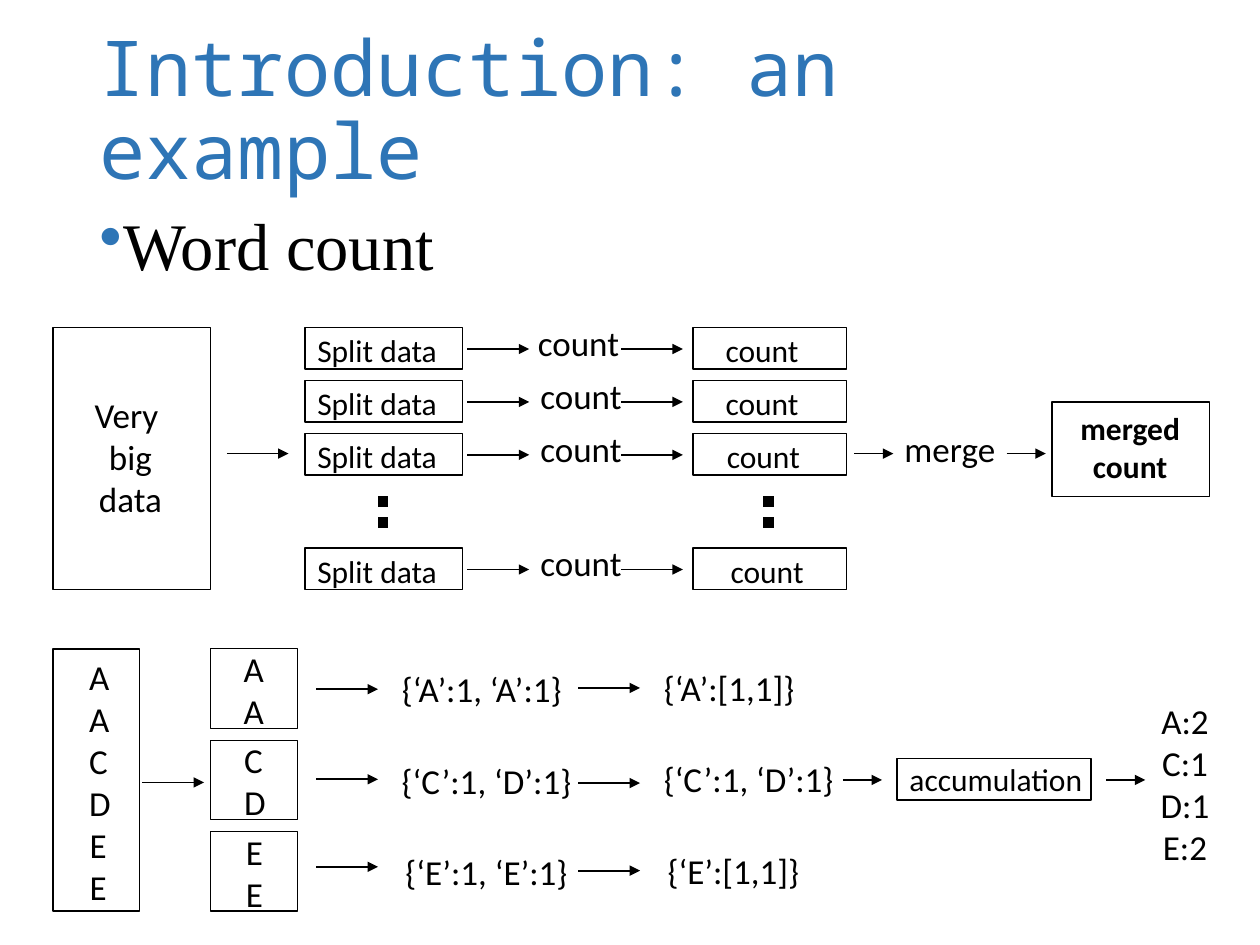
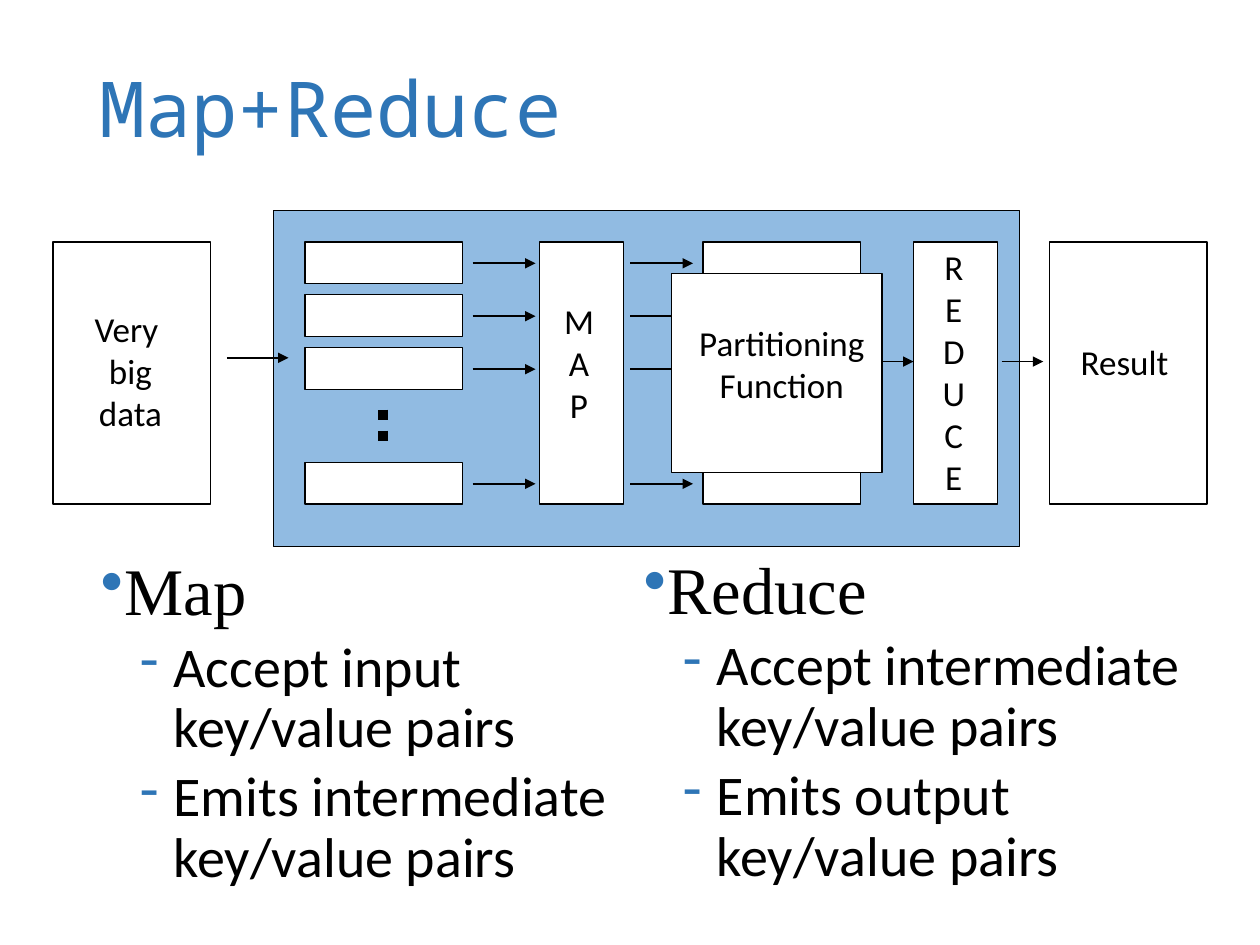
from lxml import etree
from pptx import Presentation
from pptx.dml.color import RGBColor as Rgb
from pptx.enum.dml import MSO_LINE as Dash
from pptx.enum.shapes import MSO_CONNECTOR as Conn, MSO_SHAPE as Kind
from pptx.enum.text import MSO_ANCHOR as Anchor, MSO_AUTO_SIZE as Fit, PP_ALIGN as Align
from pptx.oxml.ns import qn
from pptx.util import Inches, Pt

# Content
INTRO = "Introduction: an example"
MODEL = "Map+Reduce"
WORDS = [(0, "Word count")]
MAP = [(0, "Map"),
       (1, "Accept input key/value pairs"),
       (1, "Emits intermediate key/value pairs")]
REDUCE = [(0, "Reduce"),
          (1, "Accept intermediate key/value pairs"),
          (1, "Emits output key/value pairs")]
BIG = ["Very ", "big", "data"]
SUMS = ["A:2", "C:1", "D:1", "E:2"]
# Each part: its letters, mapped pairs, grouped pairs
PARTS = [
    (["A", "A"], "{‘A’:1, ‘A’:1}", "{‘A’:[1,1]}"),
    (["C", "D "], "{‘C’:1, ‘D’:1}", "{‘C’:1, ‘D’:1}"),
    (["E", "E "], "{‘E’:1, ‘E’:1}", "{‘E’:[1,1]}"),
]

# Shared style
HUES = {"ink": "000000", "head": "2E75B6", "paper": "FFFFFF", "panel": "5B9BD5"}
SANS, SERIF, MONO = "Calibri", "Times New Roman", "Noto Sans Mono"
# Level: bullet, font, size, space before, margin, hang
LEVELS = [("•", SERIF, 38, 10, 0.19, 0.19),
          ("‐", SANS, 32, 5, 0.58, 0.27)]
STEPS = (0, 0.42, 0.84, 1.75)    # tops of the four stacked rows
ROW, TALL, WIDE = 0.33, 2.08, 1.25
MID = 0.17                       # row top to its arrow

deck = Presentation()
deck.slide_width, deck.slide_height = Inches(10), Inches(7.5)


def hue(name):
    return Rgb.from_string(HUES[name])


def write(para, text, size, font=SANS, color="ink", bold=False):
    run = para.add_run()
    run.text = text
    run.font.size, run.font.name, run.font.bold = Pt(size), font, bold
    run.font.color.rgb = hue(color)


def frame(page, x, y, w, h):
    area = page.shapes.add_textbox(*map(Inches, (x, y, w, h))).text_frame
    area.word_wrap = True
    return area


def label(page, lines, x, y, w, h, size=20, align=Align.CENTER, wrap=False, bold=False):
    area = frame(page, x, y, w, h)
    area.word_wrap, area.auto_size = wrap, Fit.SHAPE_TO_FIT_TEXT
    for i, line in enumerate(lines):
        para = area.add_paragraph() if i else area.paragraphs[0]
        para.alignment = align
        write(para, line, size, bold=bold)


def word(page, text, x, y, w, h=0.43, size=20):
    label(page, [text], x, y, w, h, size, Align.LEFT)


def box(page, x, y, w, h, fill="paper", alpha=None):
    shape = page.shapes.add_shape(Kind.RECTANGLE, *map(Inches, (x, y, w, h)))
    shape.shadow.inherit = False
    shape.fill.solid()
    shape.fill.fore_color.rgb = hue(fill)
    shape.line.color.rgb, shape.line.width = hue("ink"), Pt(0.75)
    if alpha:
        tint = shape.fill._xPr.find(".//" + qn("a:srgbClr"))
        etree.SubElement(tint, qn("a:alpha"), val=str(alpha * 1000))
    return shape


def stroke(page, x, y, x2, y2, width):
    line = page.shapes.add_connector(Conn.STRAIGHT, *map(Inches, (x, y, x2, y2)))
    line.line.color.rgb, line.line.width = hue("ink"), Pt(width)
    etree.SubElement(line._element.spPr, qn("a:effectLst"))
    return line


def arrow(page, x, y, span=0.49):
    line = stroke(page, x, y, x + span, y, 1)
    etree.SubElement(line.line._get_or_add_ln(), qn("a:tailEnd"), type="triangle")


def dots(page, x, y):
    stroke(page, x, y, x, y + 0.25, 6).line.dash_style = Dash.ROUND_DOT


def bullets(page, items, x, y, w, h):
    area = frame(page, x, y, w, h)
    for i, (level, text) in enumerate(items):
        sign, font, size, gap, left, hang = LEVELS[level]
        para = area.add_paragraph() if i else area.paragraphs[0]
        para.level, para.line_spacing, para.space_before = level, 0.9, Pt(gap)
        props = para._p.get_or_add_pPr()
        props.set("marL", str(Inches(left)))
        props.set("indent", str(-Inches(hang)))
        tint = etree.SubElement(props, qn("a:buClr"))
        etree.SubElement(tint, qn("a:srgbClr"), val=HUES["head"])
        etree.SubElement(props, qn("a:buChar"), char=sign)
        write(para, text, size, font)


def start(title):
    page = deck.slides.add_slide(deck.slide_layouts[6])
    area = frame(page, 0.69, 0.17, 8.62, 1.45)
    area.vertical_anchor = Anchor.MIDDLE
    area.paragraphs[0].line_spacing = 0.9
    write(area.paragraphs[0], title, 44, MONO, "head")
    return page


def source(page, top):
    box(page, 0.42, top, WIDE, TALL)
    label(page, BIG, 0.61, top + 0.47, 0.85, 1.1)


def count_flow(page, top):
    source(page, top)
    arrow(page, 1.8, top + 1)
    shifts = [(4.17, 5.66), (4.19, 5.66), (4.19, 5.67), (4.19, 5.7)]
    for step, (first, second) in zip(STEPS, shifts):
        y = top + step
        box(page, 2.42, y, WIDE, ROW)
        word(page, "Split data", 2.42, y - 0.02, 1.24, 0.4, 18)
        word(page, "count", first, y - 0.1, 0.86)
        box(page, 5.5, y, 1.22, ROW)
        word(page, "count", second, y - 0.02, 0.79, 0.4, 18)
        for x in (3.71, 4.93):
            arrow(page, x, y + MID)
    for x in (3.04, 6.1):
        dots(page, x, top + 1.34)
    # Merge
    for x in (6.78, 7.99):
        arrow(page, x, top + 1, 0.31)
    word(page, "merge", 7.08, top + 0.74, 0.99)
    box(page, 8.35, top + 0.59, WIDE, 0.75)
    label(page, ["merged", "count"], 8.42, top + 0.6, 1.1, 0.7, 18, bold=True)


def letter_flow(page, top):
    box(page, 0.42, top, 0.69, TALL)
    chars = [c.strip() for part in PARTS for c in part[0]]
    label(page, chars, 0.61, top, 0.34, 2.12, wrap=True)
    arrow(page, 1.13, top + 1.06)
    for i, (pair, mapped, grouped) in enumerate(PARTS):
        y = top + i * 0.725
        nudge = 0.03 if i == 2 else 0
        box(page, 1.67, y, 0.69, 0.63)
        label(page, pair, 1.83 + i / 100, y - 0.06, 0.34 if i else 0.37, 0.77, wrap=True)
        arrow(page, 2.51, y + (0.32, 0.31, 0.28)[i])
        word(page, mapped, 3.09 + nudge, y + 0.1, (1.48, 1.56, 1.5)[i])
        arrow(page, 4.59, y + (0.31, 0.34, 0.31)[i])
        word(page, grouped, 5.17 + nudge, y + 0.09, (1.25, 1.56, 1.26)[i])
    # Totals
    gather = box(page, 7.12, top + 0.87, 1.54, ROW).text_frame
    gather.word_wrap, gather.vertical_anchor = False, Anchor.MIDDLE
    gather.paragraphs[0].alignment = Align.LEFT
    write(gather.paragraphs[0], "accumulation", 18)
    for x in (6.69, 8.78):
        arrow(page, x, top + 1.04, 0.31)
    label(page, SUMS, 9, top + 0.35, 0.81, 1.45, wrap=True)


def model_flow(page, top):
    box(page, 2.17, top - 0.25, 5.92, 2.67, "panel", 67)
    source(page, top)
    arrow(page, 1.8, top + 0.92)
    for i, step in enumerate(STEPS):
        box(page, 2.42, top + step, WIDE, ROW)
        if i in (0, 3):
            box(page, 5.58, top + step, WIDE, ROW)
        for x in (3.75, 5):
            arrow(page, x, top + step + MID, 0.5)
    dots(page, 3.04, top + 1.33)
    for x in (6.92, 7.95):
        arrow(page, x, top + 0.95, 0.33)
    # Stages
    for x, w in ((4.28, 0.67), (7.25, 0.67), (8.33, WIDE)):
        box(page, x, top, w, TALL)
    label(page, "MAP", 4.38, top + 0.41, 0.43, 1.1)
    label(page, "REDUCE", 7.37, top - 0.02, 0.4, 2.1)
    label(page, ["Result"], 8.43, top + 0.73, 0.99, 0.43)
    box(page, 5.33, top + 0.25, 1.67, 1.58)
    label(page, ["Partitioning", "Function"], 5.41, top + 0.58, 1.59, 0.77)


# Slide 1: word count
page = start(INTRO)
bullets(page, WORDS, 0.69, 1.64, 8.62, 5.08)
count_flow(page, 2.6)
letter_flow(page, 5.15)

# Slide 2: the model
page = start(MODEL)
bullets(page, MAP, 0.7, 4.38, 4.3, 2.95)
model_flow(page, 1.92)
bullets(page, REDUCE, 5.01, 4.37, 4.69, 2.95)

deck.save("out.pptx")
